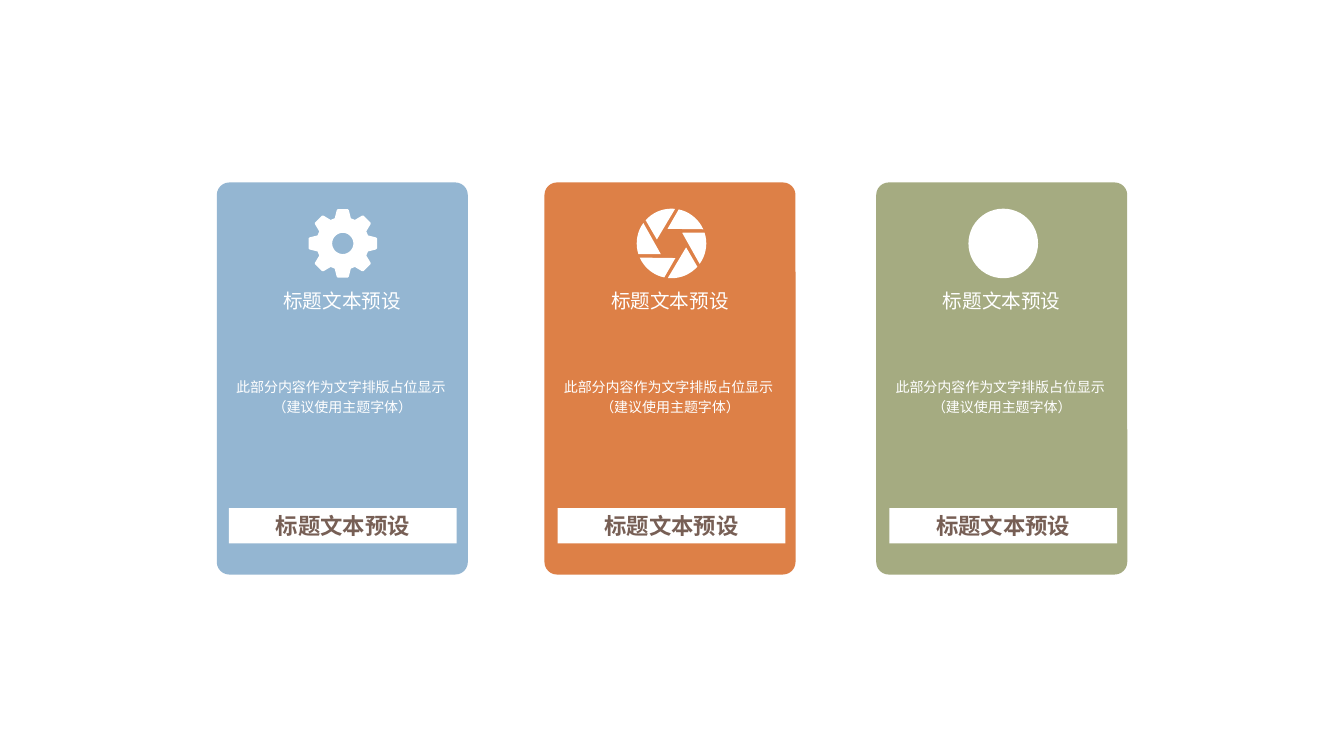
from dataclasses import dataclass
from math import cos, hypot, atan2, radians, sin
from typing import Callable

from pptx import Presentation
from pptx.dml.color import RGBColor
from pptx.enum.shapes import MSO_SHAPE as Preset
from pptx.enum.text import MSO_ANCHOR as Anchor, PP_ALIGN as Align
from pptx.shapes.autoshape import Shape
from pptx.slide import Slide
from pptx.util import Inches, Pt

Point = tuple[float, float]

COLORS = {
    "blue": "94B6D2",
    "orange": "DD8047",
    "green": "A5AB81",
    "white": "FFFFFF",
    "brown": "775F55",
}
FONT = "Calibri"
HEADING = "标题文本预设"
BODY = ["此部分内容作为文字排版占位显示 ", "（建议使用主题字体）"]
CARD_WIDTH, CARD_HEIGHT, CARD_TOP = 2.49, 3.89, 1.81
BAR_WIDTH, BAR_INSET = 2.26, 0.12
ICON_RADIUS, ICON_CENTER_Y, ICON_INSET = 0.345, 2.415, 1.25


@dataclass(frozen=True)
class Card:
    left: float
    nudge: float
    color: str
    draw_icon: Callable[[Slide, Point], None]


@dataclass(frozen=True)
class TextStyle:
    size: int
    color: str
    bold: bool = False
    line_spacing: float = 1.0


TITLE_STYLE = TextStyle(14, "white")
BODY_STYLE = TextStyle(10, "white", line_spacing=1.2)
BAR_STYLE = TextStyle(16, "brown", bold=True)


def paint(shape: Shape, color: str) -> None:
    shape.fill.solid()
    shape.fill.fore_color.rgb = RGBColor.from_string(COLORS[color])
    shape.line.fill.background()
    shape.shadow.inherit = False


def add_preset(slide: Slide, preset: Preset, left: float, top: float,
               width: float, height: float, color: str) -> Shape:
    shape = slide.shapes.add_shape(
        preset, Inches(left), Inches(top), Inches(width), Inches(height))
    paint(shape, color)
    return shape


def write(shape: Shape, lines: list[str], style: TextStyle, wrap: bool) -> None:
    frame = shape.text_frame
    frame.word_wrap = wrap
    frame.vertical_anchor = Anchor.MIDDLE
    paragraph = frame.paragraphs[0]
    paragraph.alignment = Align.CENTER
    paragraph.line_spacing = style.line_spacing
    for index, line in enumerate(lines):
        if index:
            paragraph.add_line_break()
        run = paragraph.add_run()
        run.text = line
        run.font.name = FONT
        run.font.size = Pt(style.size)
        run.font.bold = style.bold
        run.font.color.rgb = RGBColor.from_string(COLORS[style.color])


def add_text(slide: Slide, left: float, top: float, height: float,
             lines: list[str], style: TextStyle, wrap: bool) -> Shape:
    box = slide.shapes.add_textbox(
        Inches(left), Inches(top), Inches(CARD_WIDTH), Inches(height))
    write(box, lines, style, wrap)
    return box


def polar(radius: float, degrees: float) -> Point:
    return radius * cos(radians(degrees)), radius * sin(radians(degrees))


def rotate(point: Point, degrees: float) -> Point:
    angle = atan2(point[1], point[0]) + radians(degrees)
    radius = hypot(*point)
    return radius * cos(angle), radius * sin(angle)


def add_outline(slide: Slide, center: Point, contours: list[list[Point]]) -> None:
    placed = [[(Inches(center[0] + x), Inches(center[1] + y)) for x, y in contour]
              for contour in contours]
    builder = slide.shapes.build_freeform(*placed[0][0])
    builder.add_line_segments(placed[0][1:])
    for contour in placed[1:]:
        builder.move_to(*contour[0])
        builder.add_line_segments(contour[1:])
    paint(builder.convert_to_shape(), "white")


def draw_gear(slide: Slide, center: Point) -> None:
    tooth = [(0.25, -0.08), (0.33, -0.06), (0.34, -0.05),
             (0.34, 0.05), (0.33, 0.06), (0.25, 0.08)]
    rim = [rotate(point, turn) for turn in range(0, 360, 45) for point in tooth]
    hole = [polar(0.105, angle) for angle in range(360, 0, -10)]
    add_outline(slide, center, [rim, hole])


def draw_aperture(slide: Slide, center: Point) -> None:
    blade = [polar(ICON_RADIUS, angle) for angle in range(-138, -83, 6)]
    blade.append(polar(0.15, 195))
    add_outline(slide, center, [[rotate(point, turn) for point in blade]
                                for turn in range(0, 360, 60)])


def draw_disc(slide: Slide, center: Point) -> None:
    add_preset(slide, Preset.OVAL, center[0] - ICON_RADIUS,
               center[1] - ICON_RADIUS, 2 * ICON_RADIUS, 2 * ICON_RADIUS, "white")


def draw_card(slide: Slide, card: Card) -> None:
    panel = add_preset(slide, Preset.ROUNDED_RECTANGLE, card.left, CARD_TOP,
                       CARD_WIDTH, CARD_HEIGHT, card.color)
    panel.adjustments[0] = 0.05
    card.draw_icon(slide, (card.left + ICON_INSET + card.nudge, ICON_CENTER_Y))
    add_text(slide, card.left, 2.81, 0.34, [HEADING], TITLE_STYLE, False)
    body = add_text(slide, card.left, 3.67, 0.5, BODY, BODY_STYLE, True)
    frame = body.text_frame
    frame.margin_left = frame.margin_right = Inches(0)
    frame.margin_top = frame.margin_bottom = Inches(0)
    bar = add_preset(slide, Preset.RECTANGLE, card.left + BAR_INSET + card.nudge,
                     5.04, BAR_WIDTH, 0.35, "white")
    write(bar, [HEADING], BAR_STYLE, False)


CARDS = [
    Card(2.15, 0, "blue", draw_gear),
    Card(5.4, 0.01, "orange", draw_aperture),
    Card(8.69, 0.01, "green", draw_disc),
]


def main() -> None:
    presentation = Presentation()
    presentation.slide_width = Inches(13.33)
    presentation.slide_height = Inches(7.5)
    slide = presentation.slides.add_slide(presentation.slide_layouts[6])
    for card in CARDS:
        draw_card(slide, card)
    presentation.save("out.pptx")


if __name__ == "__main__":
    main()
